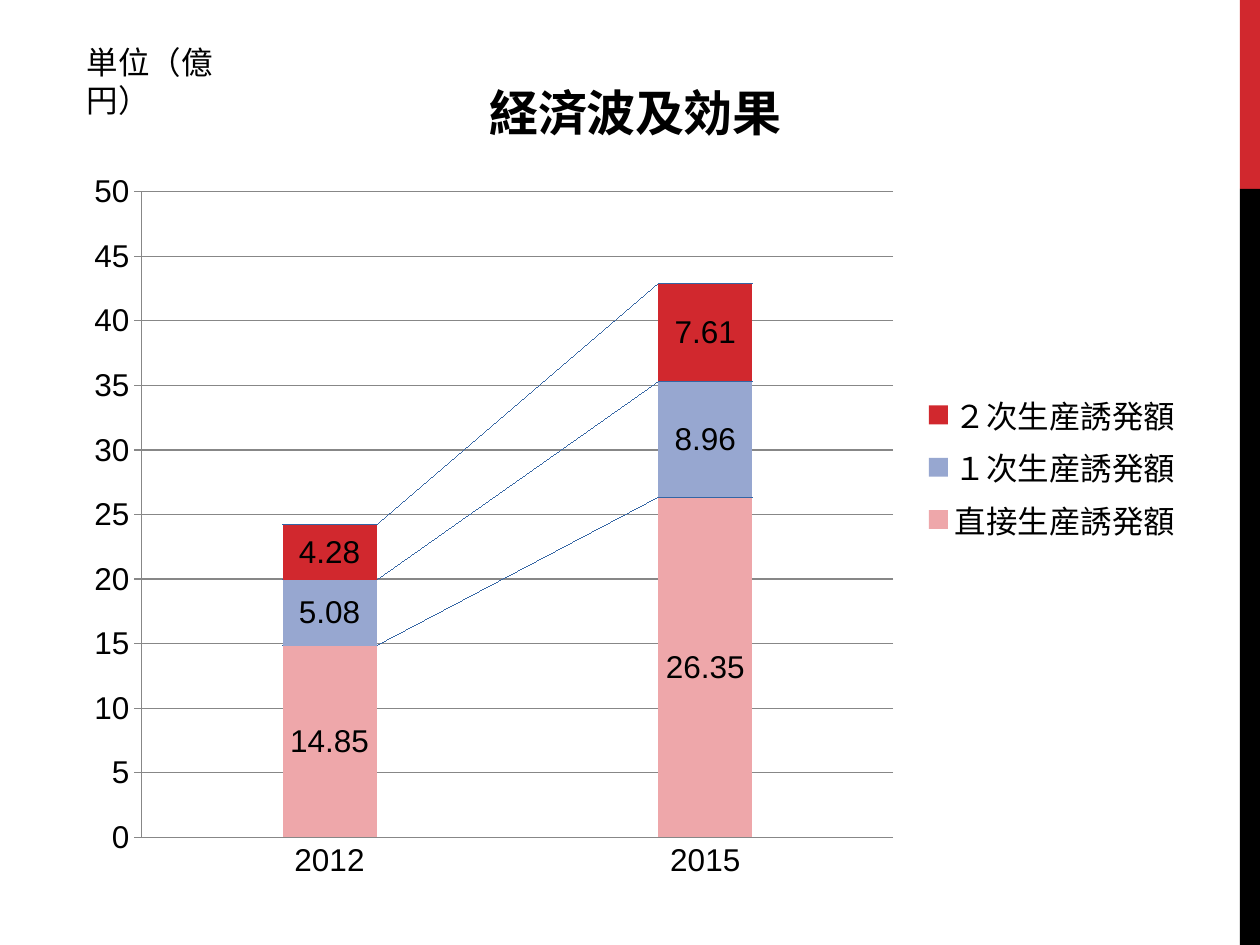
from lxml import etree
from pptx import Presentation
from pptx.chart.data import CategoryChartData
from pptx.dml.color import RGBColor
from pptx.enum.chart import XL_CHART_TYPE, XL_LABEL_POSITION, XL_LEGEND_POSITION, XL_TICK_MARK
from pptx.enum.shapes import MSO_SHAPE
from pptx.oxml import parse_xml
from pptx.oxml.ns import nsdecls, qn
from pptx.util import Pt

STACKED = XL_CHART_TYPE.COLUMN_STACKED
CENTER = XL_LABEL_POSITION.CENTER
RIGHT = XL_LEGEND_POSITION.RIGHT
TICK_NONE, TICK_OUT = XL_TICK_MARK.NONE, XL_TICK_MARK.OUTSIDE
RECT = MSO_SHAPE.RECTANGLE

FONT = "Arial"
COLORS = {
    "red": "D1282E",
    "blue": "97A7D0",
    "pink": "EEA7AA",
    "black": "000000",
    "grid": "878787",
    "link": "3465A4",
}
SLIDE_W, SLIDE_H = 720, 540
YEARS = ["2012", "2015"]
SERIES = [
    ("直接生産誘発額", (14.85, 26.35), "pink"),
    ("１次生産誘発額", (5.08, 8.96), "blue"),
    ("２次生産誘発額", (4.28, 7.61), "red"),
]


def rgb(name):
    return RGBColor.from_string(COLORS[name])


def set_font(font, size=18, color="black", bold=False):
    font.name = FONT
    font.size = Pt(size)
    font.bold = bold
    font.color.rgb = rgb(color)


def write(tf, text, **fmt):
    r = tf.paragraphs[0].add_run()
    r.text = text
    set_font(r.font, **fmt)


def add_side_band(slide, x, y, w, h):
    """Red and black strip; the red part is one fifth of the height."""
    red_h = h / 5
    for top, height, color in ((y, red_h, "red"), (y + red_h, h - red_h, "black")):
        sp = slide.shapes.add_shape(RECT, Pt(x), Pt(top), Pt(w), Pt(height))
        sp.shadow.inherit = False
        sp.fill.solid()
        sp.fill.fore_color.rgb = rgb(color)
        sp.line.fill.background()


def add_series_lines(plot):
    """Join the tops of matching segments in neighbouring columns."""
    lines = parse_xml(
        f'<c:serLines {nsdecls("c", "a")}><c:spPr><a:ln w="6350"><a:solidFill>'
        f'<a:srgbClr val="{COLORS["link"]}"/></a:solidFill></a:ln></c:spPr></c:serLines>'
    )
    bar = plot.series[0]._element.getparent()
    bar.find(qn("c:axId")).addprevious(lines)


def set_plot_box(chart, **box):
    """Fix the inner plot area, in fractions of the chart."""
    area = chart._chartSpace.find(".//" + qn("c:plotArea"))
    for old in area.findall(qn("c:layout")):
        area.remove(old)
    layout = etree.Element(qn("c:layout"))
    manual = etree.SubElement(layout, qn("c:manualLayout"))
    values = {"layoutTarget": "inner", "xMode": "edge", "yMode": "edge", **box}
    for tag, value in values.items():
        etree.SubElement(manual, qn("c:" + tag)).set("val", str(value))
    area.insert(0, layout)


def style_axes(chart):
    value, category = chart.value_axis, chart.category_axis
    value.minimum_scale, value.maximum_scale, value.major_unit = 0, 50, 5
    value.has_major_gridlines = True
    value.major_tick_mark, category.major_tick_mark = TICK_OUT, TICK_NONE
    for fmt in (value.format, category.format, value.major_gridlines.format):
        fmt.line.color.rgb = rgb("grid")
        fmt.line.width = Pt(0.75)


def add_effect_chart(slide, x, y, w, h):
    data = CategoryChartData()
    data.categories = YEARS
    for name, values, _ in SERIES:
        data.add_series(name, values)
    chart = slide.shapes.add_chart(STACKED, Pt(x), Pt(y), Pt(w), Pt(h), data).chart
    set_font(chart.font)
    chart.has_title = True
    write(chart.chart_title.text_frame, "経済波及効果", size=28, bold=True)
    chart.has_legend = True
    chart.legend.position = RIGHT
    chart.legend.include_in_layout = False
    set_font(chart.legend.font)

    plot = chart.plots[0]
    plot.gap_width, plot.overlap = 300, 100
    for series, (_, _, color) in zip(plot.series, SERIES):
        series.format.fill.solid()
        series.format.fill.fore_color.rgb = rgb(color)
        labels = series.data_labels
        labels.show_value = True
        labels.position = CENTER
        set_font(labels.font)
    add_series_lines(plot)
    style_axes(chart)
    set_plot_box(chart, x=0.06, y=0.18, w=0.67, h=0.75)


def add_unit_note(slide, x, y, w, h):
    tf = slide.shapes.add_textbox(Pt(x), Pt(y), Pt(w), Pt(h)).text_frame
    tf.word_wrap = True
    write(tf, "単位（億円）")


def main():
    prs = Presentation()
    prs.slide_width, prs.slide_height = Pt(SLIDE_W), Pt(SLIDE_H)
    slide = prs.slides.add_slide(prs.slide_layouts[6])
    band_w = 11.5
    left, top = 42.5, 21
    add_side_band(slide, SLIDE_W - band_w, 0, band_w, SLIDE_H)
    add_effect_chart(slide, left, top, 641, 492)
    add_unit_note(slide, left, top, 108, 29)
    prs.save("out.pptx")


if __name__ == "__main__":
    main()
